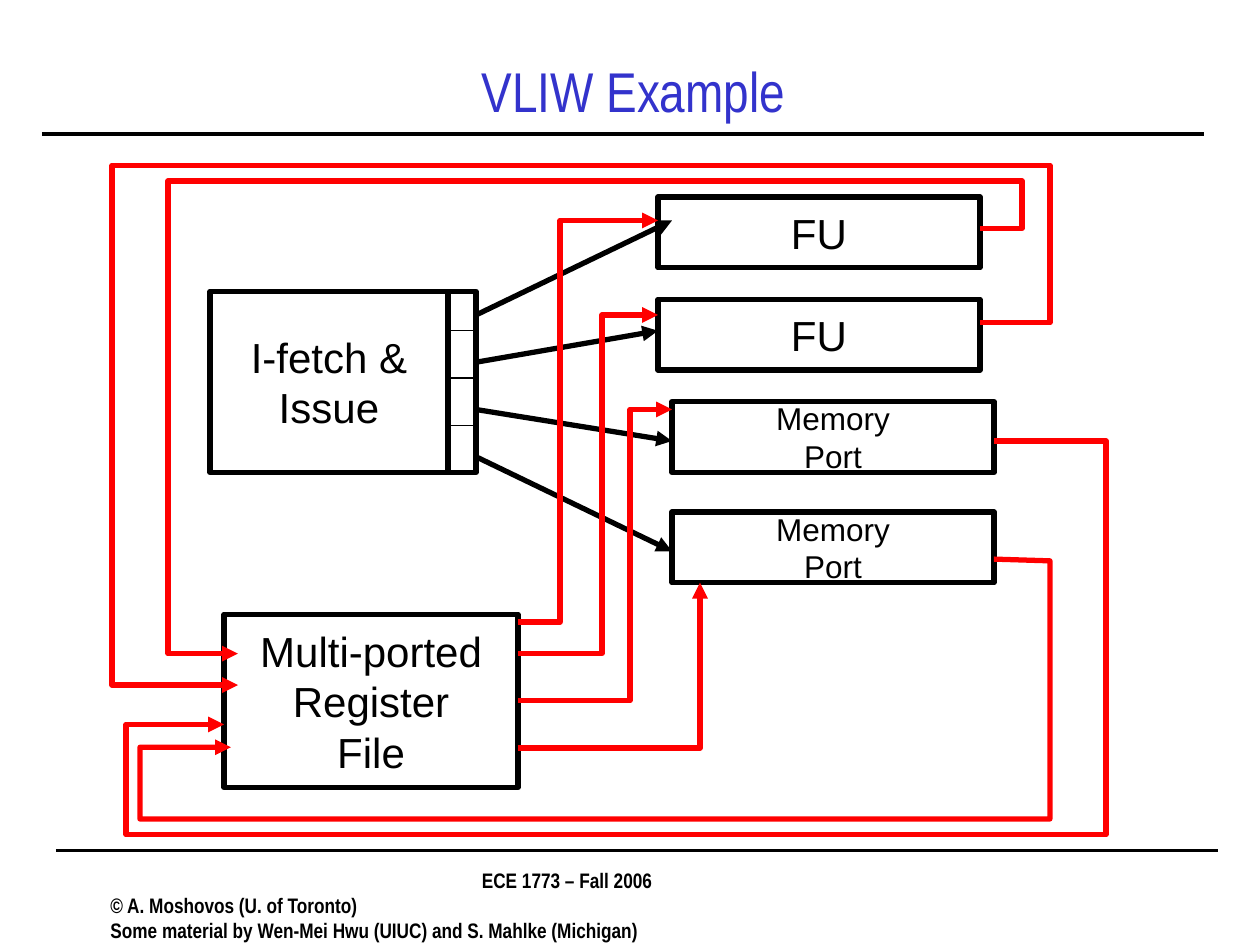
"""Build the VLIW example slide: issue slots, functional units and register file."""
from lxml import etree
from pptx import Presentation
from pptx.dml.color import RGBColor
from pptx.enum.shapes import MSO_CONNECTOR, MSO_SHAPE
from pptx.enum.text import MSO_ANCHOR, PP_ALIGN
from pptx.oxml.ns import qn
from pptx.util import Pt

BLACK = RGBColor(0x00, 0x00, 0x00)
RED = RGBColor(0xFF, 0x00, 0x00)
BLUE = RGBColor(0x33, 0x33, 0xCC)
RECT = MSO_SHAPE.RECTANGLE
STRAIGHT = MSO_CONNECTOR.STRAIGHT
MIDDLE, TOP = MSO_ANCHOR.MIDDLE, MSO_ANCHOR.TOP
CENTER, LEFT = PP_ALIGN.CENTER, PP_ALIGN.LEFT

TITLE_FONT = {"name": "Arial Narrow", "size": Pt(32), "bold": False}
FOOTER_FONT = {"name": "Arial Narrow", "size": Pt(12), "bold": True}
LARGE_FONT = {"name": "Arial", "size": Pt(24), "bold": False}
SMALL_FONT = {"name": "Arial", "size": Pt(18), "bold": False}

SLOT_LEFT, SLOT_RIGHT, SLOT_STEP = 256, 272, 27
UNIT_SIZE = (184, 40.5)
UNITS = [
    (376, 112.5, ["FU"], LARGE_FONT),
    (376, 171, ["FU"], LARGE_FONT),
    (384, 229.5, ["Memory", "Port"], SMALL_FONT),
    (384, 292.5, ["Memory", "Port"], SMALL_FONT),
]
ISSUE_TARGETS = [(384, 126), (376, 189), (384, 252), (384, 315)]
READ_PATHS = [
    [(296, 355.5), (320, 355.5), (320, 126), (376, 126)],
    [(296, 373.5), (344, 373.5), (344, 180), (376, 180)],
    [(296, 400.5), (360, 400.5), (360, 234), (384, 234)],
    [(296, 427.5), (400, 427.5), (400, 333)],
]
WRITE_PATHS = [
    [(560, 130.5), (584, 130.5), (584, 103.5), (96, 103.5), (96, 373.5), (136, 373.5)],
    [(560, 184.5), (600, 184.5), (600, 94.5), (64, 94.5), (64, 391.5), (136, 391.5)],
    [(568, 252), (632, 252), (632, 477), (72, 477), (72, 414), (128, 414)],
    [(568, 319.5), (600, 320.5), (600, 468), (80, 468), (80, 427), (132, 427)],
]


def write_text(tf, lines, font, color, anchor=MIDDLE, wrap=False):
    """Write (text, alignment) lines, one paragraph each."""
    tf.word_wrap = wrap
    tf.vertical_anchor = anchor
    for i, (text, align) in enumerate(lines):
        p = tf.add_paragraph() if i else tf.paragraphs[0]
        p.alignment = align
        r = p.add_run()
        r.text = text
        r.font.color.rgb = color
        for name, value in font.items():
            setattr(r.font, name, value)


def add_label(s, box, lines, font, color, anchor=MIDDLE):
    """Add a wrapping text box."""
    sp = s.shapes.add_textbox(*map(Pt, box))
    write_text(sp.text_frame, lines, font, color, anchor, wrap=True)


def add_box(s, box, lines=(), font=LARGE_FONT, width=3):
    """Add an unfilled black rectangle with centred lines."""
    sp = s.shapes.add_shape(RECT, *map(Pt, box))
    sp.shadow.inherit = False
    sp.fill.background()
    sp.line.color.rgb = BLACK
    sp.line.width = Pt(width)
    if lines:
        write_text(sp.text_frame, [(t, CENTER) for t in lines], font, BLACK)


def add_arrowhead(sp):
    """Give a shape's line round joins and a triangle at its end."""
    ln = sp._element.spPr.find(qn("a:ln"))
    etree.SubElement(ln, qn("a:round"))
    etree.SubElement(ln, qn("a:tailEnd"), type="triangle")


def add_line(s, start, end, width, arrow=False):
    """Add a straight black line, with an arrowhead if asked."""
    sp = s.shapes.add_connector(STRAIGHT, *map(Pt, start + end))
    sp.line.color.rgb = BLACK
    sp.line.width = Pt(width)
    if arrow:
        add_arrowhead(sp)
    etree.SubElement(sp._element.spPr, qn("a:effectLst"))


def add_data_path(s, points):
    """Add a red bent path that ends in an arrowhead."""
    start, *rest = [(Pt(x), Pt(y)) for x, y in points]
    builder = s.shapes.build_freeform(*start)
    builder.add_line_segments(rest, close=False)
    sp = builder.convert_to_shape()
    sp.shadow.inherit = False
    sp.fill.background()
    sp.line.color.rgb = RED
    sp.line.width = Pt(3)
    add_arrowhead(sp)


def main():
    """Build and save the slide."""
    prs = Presentation()
    prs.slide_width, prs.slide_height = Pt(720), Pt(540)
    s = prs.slides.add_slide(prs.slide_layouts[6])

    add_line(s, (24, 76.5), (688, 76.5), 2.25)
    add_line(s, (32, 486), (696, 486), 2.25)
    footer = [
        ("ECE 1773 – Fall 2006", CENTER),
        ("© A. Moshovos (U. of Toronto)", LEFT),
        ("Some material by Wen-Mei Hwu (UIUC) and S. Mahlke (Michigan)", LEFT),
    ]
    add_label(s, (56, 492, 536, 36), footer, FOOTER_FONT, BLACK, TOP)
    add_label(s, (56, 31.5, 612, 40.5), [("VLIW Example", CENTER)], TITLE_FONT, BLUE)

    add_box(s, (120, 166.5, 136, 103.5), ["I-fetch &", "Issue"])
    slot_width = SLOT_RIGHT - SLOT_LEFT
    add_box(s, (SLOT_LEFT, 166.5, slot_width, 103.5))
    for row in (0, 2):
        add_box(s, (SLOT_LEFT, 189 + row * SLOT_STEP, slot_width, SLOT_STEP), width=0.75)
    for left, top, lines, font in UNITS:
        add_box(s, (left, top, *UNIT_SIZE), lines, font)
    for i, target in enumerate(ISSUE_TARGETS):
        add_line(s, (SLOT_RIGHT, 180 + i * SLOT_STEP), target, 3, arrow=True)

    add_box(s, (128, 351, 168, 99), ["Multi-ported", "Register", "File"])
    for points in READ_PATHS + WRITE_PATHS:
        add_data_path(s, points)
    prs.save("out.pptx")


if __name__ == "__main__":
    main()
